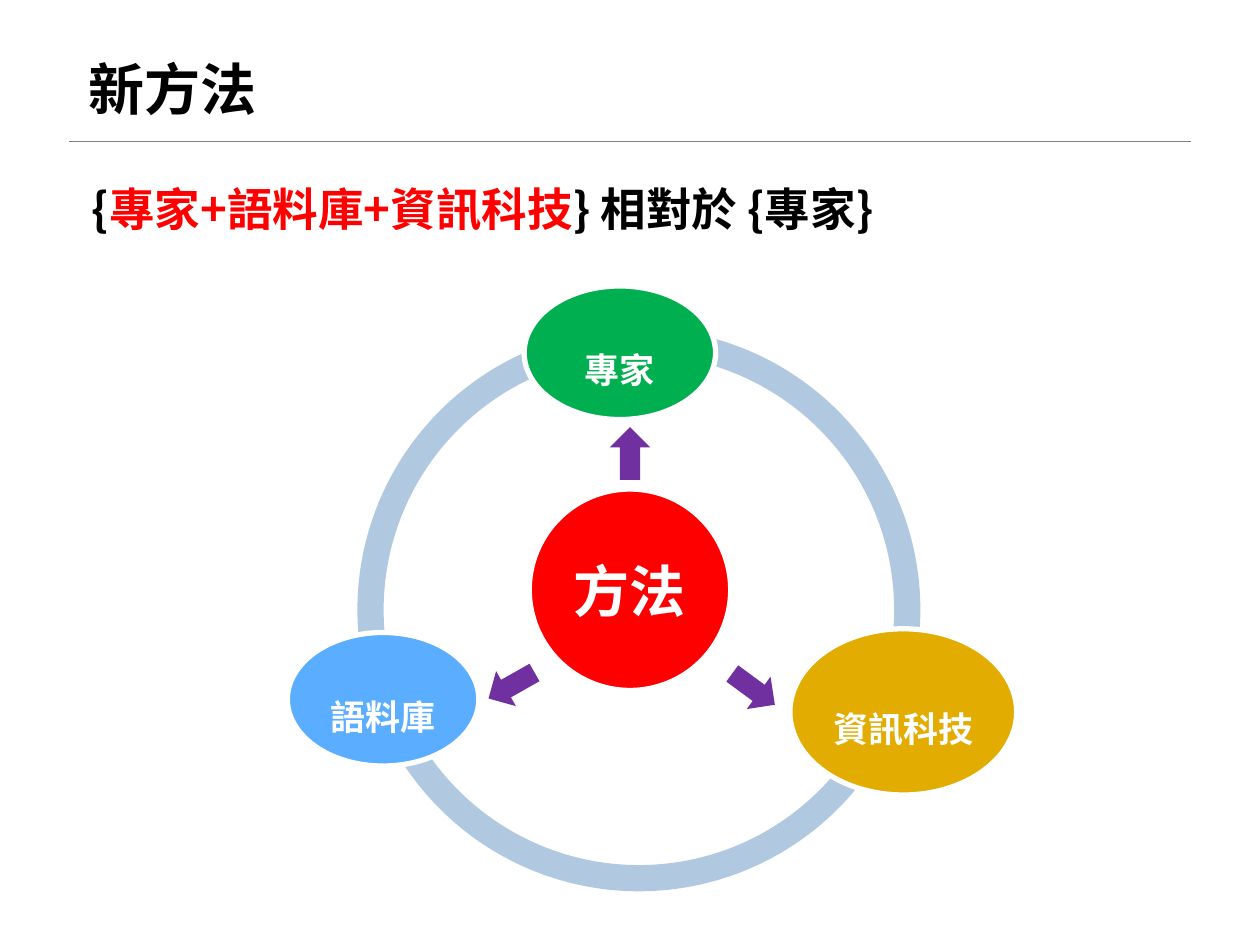
from lxml import etree
from pptx import Presentation
from pptx.dml.color import RGBColor
from pptx.enum import shapes, text
from pptx.oxml import ns
from pptx.util import Pt

FONT = "Noto Sans CJK SC"
BLACK, WHITE, RED, PURPLE = "000000", "FFFFFF", "FF0000", "7030A0"

TITLE = "新方法"
FORMULA = [(" {", BLACK), ("專家+語料庫+資訊科技", RED), ("} 相對於 {專家}", BLACK)]
RING = dict(center=(365.1, 348.5), size=(306.7, 306.7))
ARROW_SIZE = (23, 30.2)
ARROWS = [((360, 259.2), 0), ((430.6, 393.8), 126.3), ((292.3, 391.7), 240.5)]
# label, center, size, fill, outline width, font size, line spacing
NODES = [
    ("資訊科技", (516.2, 406.8), (129.6, 95), "E2AC00", 3, 20, 1.8),
    ("方法", (360, 337), (116.6, 116.6), RED, 4.5, 32, 1),
    ("專家", (354.2, 201.6), (109.4, 76.3), "00B050", 3, 20, 1.8),
    ("語料庫", (218.9, 399.6), (109.4, 76.3), "5BADFF", 3, 20, 1.8),
]


def rgb(color):
    return RGBColor.from_string(color)


def add_run(p, content, size, color=BLACK):
    r = p.add_run()
    r.text = content
    r.font.size, r.font.bold, r.font.name = Pt(size), True, FONT
    r.font.color.rgb = rgb(color)
    ea = etree.SubElement(r.font._element, ns.qn("a:ea"))
    ea.set("typeface", FONT)


def add_shape(kind, center, size, fill=None, line=None, width=0):
    (x, y), (w, h) = center, size
    sp = s.shapes.add_shape(kind, Pt(x - w / 2), Pt(y - h / 2), Pt(w), Pt(h))
    sp.shadow.inherit = False
    if fill:
        sp.fill.solid()
        sp.fill.fore_color.rgb = rgb(fill)
    else:
        sp.fill.background()
    if line:
        sp.line.color.rgb = rgb(line)
        sp.line.width = Pt(width)
    else:
        sp.line.fill.background()
    return sp


prs = Presentation()
prs.slide_width, prs.slide_height = Pt(720), Pt(540)
s = prs.slides.add_slide(prs.slide_layouts[5])

rule = s.shapes.add_connector(
    shapes.MSO_CONNECTOR.STRAIGHT, Pt(39.6), Pt(80.9), Pt(680.4), Pt(80.9))
rule.line.color.rgb = rgb("808080")
rule.line.width = Pt(0.25)
etree.SubElement(rule._element.spPr, ns.qn("a:effectLst"))

title = s.shapes.title
title.left, title.top, title.width, title.height = Pt(43.2), Pt(27.4), Pt(645.8), Pt(46.1)
tf = title.text_frame
tf.auto_size = text.MSO_AUTO_SIZE.NONE
tf.vertical_anchor = text.MSO_ANCHOR.MIDDLE
tf.paragraphs[0].alignment = text.PP_ALIGN.LEFT
add_run(tf.paragraphs[0], TITLE, 32)

add_shape(shapes.MSO_SHAPE.OVAL, **RING, line="B0C8E0", width=15)

for center, angle in ARROWS:
    add_shape(shapes.MSO_SHAPE.UP_ARROW, center, ARROW_SIZE, PURPLE).rotation = angle

for label, center, size, fill, width, font_size, spacing in NODES:
    sp = add_shape(shapes.MSO_SHAPE.OVAL, center, size, fill, WHITE, width)
    tf = sp.text_frame
    tf.margin_left = tf.margin_right = Pt(5)
    tf.margin_top = tf.margin_bottom = Pt(3)
    tf.vertical_anchor = text.MSO_ANCHOR.MIDDLE
    p = tf.paragraphs[0]
    p.alignment = text.PP_ALIGN.CENTER
    p.line_spacing = spacing
    add_run(p, label, font_size, WHITE)

formula = s.shapes.add_textbox(Pt(39.6), Pt(100.1), Pt(493.9), Pt(38.9))
tf = formula.text_frame
tf.word_wrap = True
p = tf.paragraphs[0]
p.line_spacing = Pt(31)
for content, color in FORMULA:
    add_run(p, content, 26, color)

prs.save("out.pptx")
